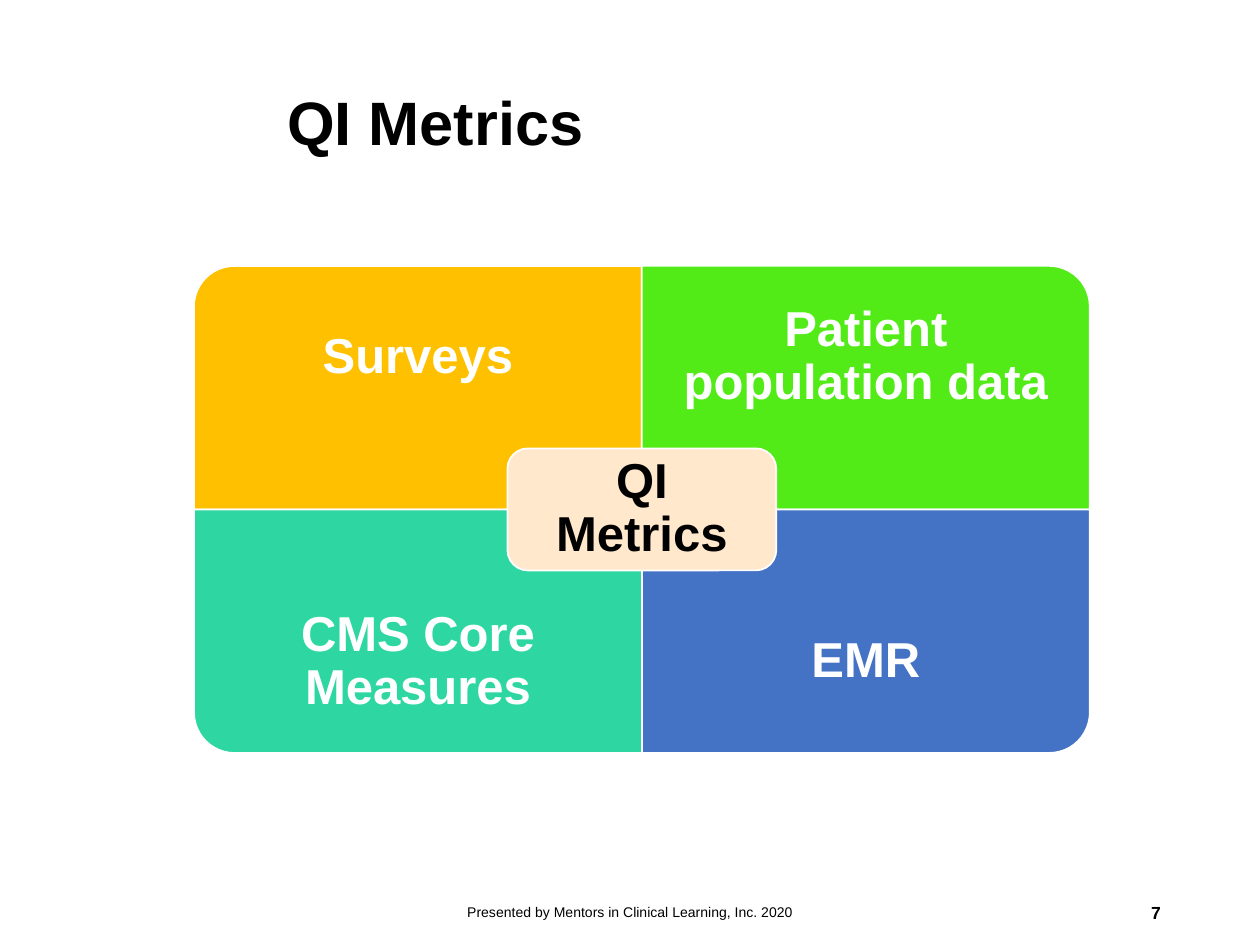
"""Build the QI Metrics slide: four rounded tiles around a centre label."""
from dataclasses import dataclass

import pptx
import pptx.dml.color
import pptx.enum.shapes
import pptx.enum.text
import pptx.util

Cm = pptx.util.Cm
Shape = pptx.enum.shapes.MSO_SHAPE
Align = pptx.enum.text.PP_ALIGN

LEFT, TOP = 3.91, 5.36
WIDE, HIGH = 9.03, 4.91
LABEL = 3.68


@dataclass
class Tile:
    text: str
    fill: str
    col: int
    row: int
    turn: int


TILES = [
    Tile("Surveys", "FFC000", 0, 0, 270),
    Tile("Patient population data", "53EB17", 1, 0, 0),
    Tile("CMS Core Measures", "2ED7A1", 0, 1, 180),
    Tile("EMR", "4472C4", 1, 1, 90),
]


def paint(target, code: str) -> None:
    target.rgb = pptx.dml.color.RGBColor.from_string(code)


def write(shape, text: str, size: float = 28, color: str = "000000",
          bold: bool = True, align=Align.CENTER, pad: float = 0.25,
          rise: float = 0.13, space: float = 1.0) -> None:
    frame = shape.text_frame
    frame.text = text
    frame.word_wrap = True
    frame.auto_size = pptx.enum.text.MSO_AUTO_SIZE.NONE
    frame.vertical_anchor = pptx.enum.text.MSO_ANCHOR.MIDDLE
    frame.margin_left = frame.margin_right = Cm(pad)
    frame.margin_top = frame.margin_bottom = Cm(rise)
    para = frame.paragraphs[0]
    para.alignment = align
    para.line_spacing = space
    font = para.runs[0].font
    font.name, font.size, font.bold = "Arial", pptx.util.Pt(size), bold
    paint(font.color, color)


def label(slide, box: tuple, text: str, **form) -> None:
    write(slide.shapes.add_textbox(*map(Cm, box)), text, **form)


def block(slide, kind, box: tuple, fill: str, turn: int = 0) -> None:
    left, top, wide, high = box
    if turn % 180:
        left, top = left + (wide - high) / 2, top + (high - wide) / 2
        wide, high = high, wide
    shape = slide.shapes.add_shape(kind, *map(Cm, (left, top, wide, high)))
    shape.rotation = turn
    shape.shadow.inherit = False
    shape.fill.solid()
    paint(shape.fill.fore_color, fill)
    shape.line.width = pptx.util.Pt(1)
    paint(shape.line.color, "FFFFFF")


def draw(slide, tile: Tile) -> None:
    left, top = LEFT + tile.col * WIDE, TOP + tile.row * HIGH
    block(slide, Shape.ROUND_1_RECTANGLE, (left, top, WIDE, HIGH),
          tile.fill, tile.turn)
    drop = tile.row * (HIGH - LABEL)
    label(slide, (left, top + drop, WIDE, LABEL), tile.text,
          color="FFFFFF", pad=0.56, rise=0.56, space=0.9)


def main() -> None:
    deck = pptx.Presentation()
    deck.slide_width, deck.slide_height = Cm(25.4), Cm(19.05)
    slide = deck.slides.add_slide(deck.slide_layouts[5])

    title = slide.shapes.title
    title.left, title.top = Cm(5.54), Cm(0.69)
    title.width, title.height = Cm(18.14), Cm(3.68)
    write(title, "QI Metrics", size=35, align=Align.LEFT, space=0.9)

    for tile in TILES:
        draw(slide, tile)

    wide, high, edge = 5.42, 2.46, 0.12
    left, top = LEFT + WIDE - wide / 2, TOP + HIGH - high / 2
    block(slide, Shape.ROUNDED_RECTANGLE, (left, top, wide, high), "FFE8CC")
    label(slide, (left + edge, top + edge, wide - 2 * edge, high - 2 * edge),
          "QI Metrics", pad=0.3, rise=0.3, space=0.9)

    label(slide, (8.41, 17.88, 8.59, 1.02),
          "Presented by Mentors in Clinical Learning, Inc. 2020",
          size=8, bold=False)
    label(slide, (17.93, 17.88, 5.72, 1.02), "7", size=10, align=Align.RIGHT)
    deck.save("out.pptx")


if __name__ == "__main__":
    main()
